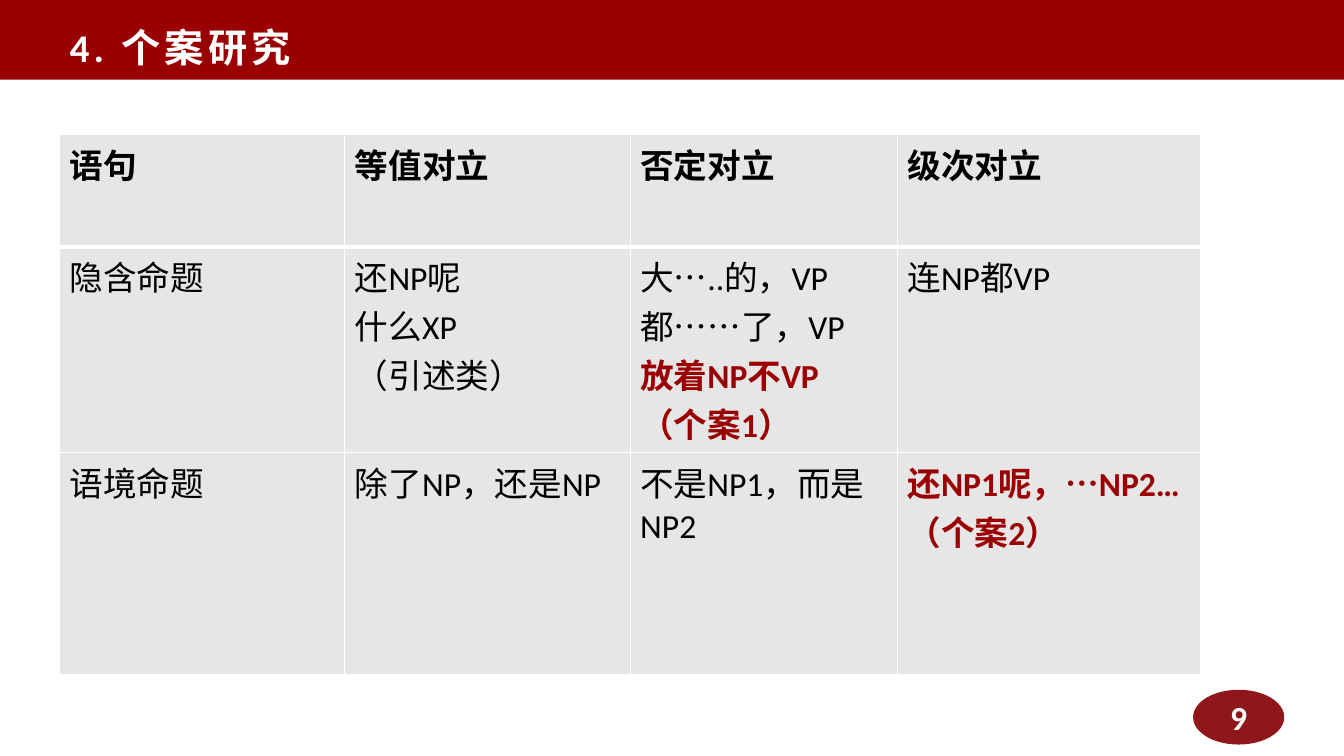
"""Build the case-study slide: a table of opposition types by kind of proposition."""
from dataclasses import dataclass

from lxml.etree import SubElement
from pptx import Presentation
from pptx.dml.color import RGBColor
from pptx.enum.lang import MSO_LANGUAGE_ID
from pptx.enum.shapes import MSO_SHAPE
from pptx.enum.text import MSO_ANCHOR, MSO_AUTO_SIZE, PP_ALIGN
from pptx.oxml.ns import qn
from pptx.util import Inches, Pt


@dataclass(frozen=True)
class Theme:
    font: str = "Calibri"
    title_size: int = 28
    text_size: int = 24
    red: RGBColor = RGBColor(0x9A, 0x00, 0x01)
    badge: RGBColor = RGBColor(0x8F, 0x17, 0x1C)
    badge_line: RGBColor = RGBColor(0x90, 0x18, 0x1C)
    grey: RGBColor = RGBColor(0xE7, 0xE6, 0xE6)
    black: RGBColor = RGBColor(0, 0, 0)
    white: RGBColor = RGBColor(0xFF, 0xFF, 0xFF)


THEME = Theme()


def write(paragraph, text, size=THEME.text_size, color=THEME.black, bold=False,
          align=PP_ALIGN.LEFT, spacing=0):
    paragraph.alignment = align
    run = paragraph.add_run()
    run.text = text
    run.font.name = THEME.font
    run.font.size = Pt(size)
    run.font.bold = bold
    run.font.color.rgb = color
    run.font.language_id = MSO_LANGUAGE_ID.SIMPLIFIED_CHINESE
    if spacing:
        run.font._element.set("spc", str(spacing * 100))


def draw_borders(cell, top=1, bottom=1):
    properties = cell._tc.get_or_add_tcPr()
    for side, points in (("L", 1), ("R", 1), ("T", top), ("B", bottom)):
        line = SubElement(properties, qn(f"a:ln{side}"), w=str(Pt(points)))
        fill = SubElement(line, qn("a:solidFill"))
        SubElement(fill, qn("a:srgbClr"), val=str(THEME.white))


presentation = Presentation()
presentation.slide_width = Inches(13.33)
presentation.slide_height = Inches(7.5)
slide = presentation.slides.add_slide(presentation.slide_layouts[5])

band = slide.shapes.add_shape(MSO_SHAPE.RECTANGLE, 0, 0, Inches(13.33), Inches(0.79))
band.shadow.inherit = False
band.fill.solid()
band.fill.fore_color.rgb = THEME.red
band.line.fill.background()

page_badge = slide.shapes.add_shape(
    MSO_SHAPE.OVAL, Inches(11.84), Inches(6.85), Inches(0.89), Inches(0.53))
page_badge.shadow.inherit = False
page_badge.fill.solid()
page_badge.fill.fore_color.rgb = THEME.badge
page_badge.line.color.rgb = THEME.badge_line
page_badge.line.width = Pt(1)
page_badge.text_frame.vertical_anchor = MSO_ANCHOR.MIDDLE
write(page_badge.text_frame.paragraphs[0], "9", color=THEME.white, bold=True,
      align=PP_ALIGN.CENTER)

title = slide.shapes.title
title.left, title.top = Inches(0.59), Inches(0.18)
title.width, title.height = Inches(5.47), Inches(0.57)
title.text_frame.auto_size = MSO_AUTO_SIZE.NONE
title.text_frame.vertical_anchor = MSO_ANCHOR.TOP
write(title.text_frame.paragraphs[0], "4. 个案研究", size=THEME.title_size,
      color=THEME.white, bold=True, spacing=3)
slide.shapes._spTree.append(title._element)

column_widths = [2.83, 2.83, 2.65, 3.01]
row_heights = [1.12, 2.04, 2.2]
propositions = [
    [["语句"], ["等值对立"], ["否定对立"], ["级次对立"]],
    [["隐含命题"], ["还NP呢", "什么XP", "（引述类）"],
     ["大…..的，VP", "都……了，VP", "放着NP不VP", "（个案1）"], ["连NP都VP"]],
    [["语境命题"], ["除了NP，还是NP"], ["不是NP1，而是NP2"],
     ["还NP1呢，…NP2…", "（个案2）"]],
]
case_lines = {"放着NP不VP", "（个案1）", "还NP1呢，…NP2…", "（个案2）"}

oppositions = slide.shapes.add_table(
    len(row_heights), len(column_widths), Inches(0.59), Inches(1.33),
    Inches(sum(column_widths)), Inches(sum(row_heights))).table
oppositions.horz_banding = False
for column, width in zip(oppositions.columns, column_widths):
    column.width = Inches(width)
for row, height in zip(oppositions.rows, row_heights):
    row.height = Inches(height)

for row_index, row_content in enumerate(propositions):
    is_header = row_index == 0
    for column_index, lines in enumerate(row_content):
        cell = oppositions.cell(row_index, column_index)
        draw_borders(cell, top=3 if row_index == 1 else 1, bottom=3 if is_header else 1)
        cell.fill.solid()
        cell.fill.fore_color.rgb = THEME.grey
        for line_index, text in enumerate(lines):
            frame = cell.text_frame
            paragraph = frame.add_paragraph() if line_index else frame.paragraphs[0]
            is_case = text in case_lines
            write(paragraph, text, color=THEME.red if is_case else THEME.black,
                  bold=is_header or is_case)

presentation.save("out.pptx")
